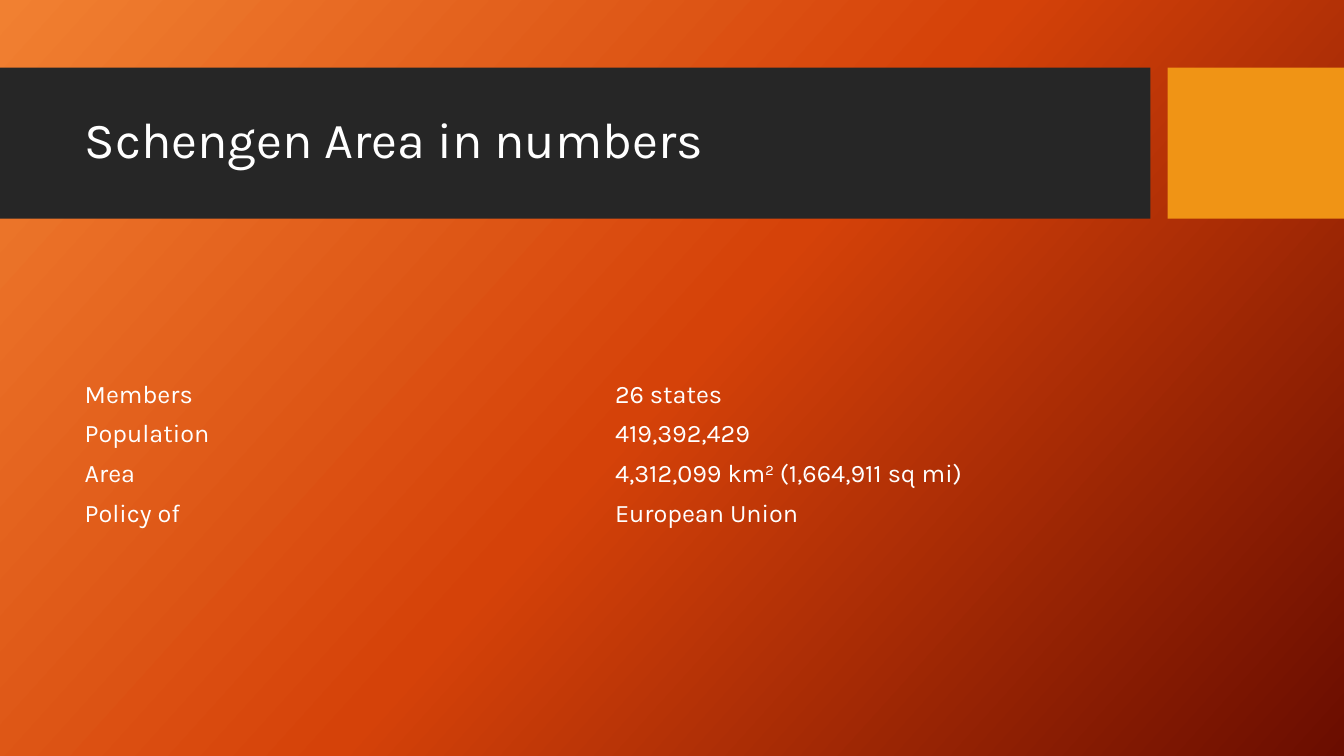
from copy import deepcopy

from pptx import Presentation
from pptx.dml.color import RGBColor
from pptx.enum.shapes import MSO_SHAPE
from pptx.enum.text import MSO_ANCHOR, PP_ALIGN
from pptx.util import Inches, Pt

RECTANGLE = MSO_SHAPE.RECTANGLE
MIDDLE = MSO_ANCHOR.MIDDLE
LEFT = PP_ALIGN.LEFT
TITLE_ONLY = 5
FONT = "Karla"
WHITE = "FFFFFF"
NO_STYLE_NO_GRID = "{2D5ABB26-0587-4C30-8999-92F81FD0307C}"

BACKGROUND_STOPS = [(0, "F18031"), (0.5, "D54209"), (1, "6A0D00")]
BANDS = [(0, 11.41, "262626"), (11.58, 1.75, "F09415")]

# Each cell is a list of (text, is superscript) pieces
FACTS = [
    ([("Members", False)], [("26 states", False)]),
    ([("Population", False)], [("419,392,429", False)]),
    ([("Area", False)],
     [("4,312,099 km", False), ("2", True), (" (1,664,911 sq mi)", False)]),
    ([("Policy of", False)], [("European Union", False)]),
]


def color(hex_string):
    return RGBColor.from_string(hex_string)


def add_span(para, text, size, superscript=False):
    span = para.add_run()
    span.text = text
    span.font.name = FONT
    span.font.size = Pt(size)
    span.font.color.rgb = color(WHITE)
    if superscript:
        span.font._element.set("baseline", "30000")


def paint_background(page):
    fill = page.background.fill
    fill.gradient()
    fill.gradient_angle = 360 - 42
    first = fill.gradient_stops[0]._gs
    first.addnext(deepcopy(first))
    for stop, (position, shade) in zip(fill.gradient_stops, BACKGROUND_STOPS):
        stop.position = position
        stop.color.rgb = color(shade)


def add_band(page, left, width, shade):
    band = page.shapes.add_shape(
        RECTANGLE, Inches(left), Inches(0.67), Inches(width), Inches(1.5))
    band.shadow.inherit = False
    band.fill.solid()
    band.fill.fore_color.rgb = color(shade)
    band.line.fill.background()


def set_title(page, text):
    title = page.shapes.title
    title.left, title.top = Inches(0.74), Inches(0.82)
    title.width, title.height = Inches(10.51), Inches(1.18)
    title.text_frame.word_wrap = True
    title.text_frame.vertical_anchor = MIDDLE
    para = title.text_frame.paragraphs[0]
    para.alignment = LEFT
    para.line_spacing = 0.9
    add_span(para, text, 36)
    # Bring the title in front of the bands
    page.shapes._spTree.append(title._element)


def add_facts_table(page):
    frame = page.shapes.add_table(
        len(FACTS), 2, Inches(0.74), Inches(3.72),
        Inches(10.52), Inches(0.39 * len(FACTS)))
    table = frame.table
    table.first_row = False
    table.horz_banding = False
    table._tbl.tblPr.find("{*}tableStyleId").text = NO_STYLE_NO_GRID
    for row, fact in zip(table.rows, FACTS):
        for cell, pieces in zip(row.cells, fact):
            cell.fill.background()
            cell.vertical_anchor = MIDDLE
            para = cell.text_frame.paragraphs[0]
            for text, superscript in pieces:
                add_span(para, text, 18, superscript)


def main():
    deck = Presentation()
    deck.slide_width, deck.slide_height = Inches(13.33), Inches(7.5)
    page = deck.slides.add_slide(deck.slide_layouts[TITLE_ONLY])
    paint_background(page)
    for left, width, shade in BANDS:
        add_band(page, left, width, shade)
    set_title(page, "Schengen Area in numbers")
    add_facts_table(page)
    deck.save("out.pptx")


if __name__ == "__main__":
    main()
